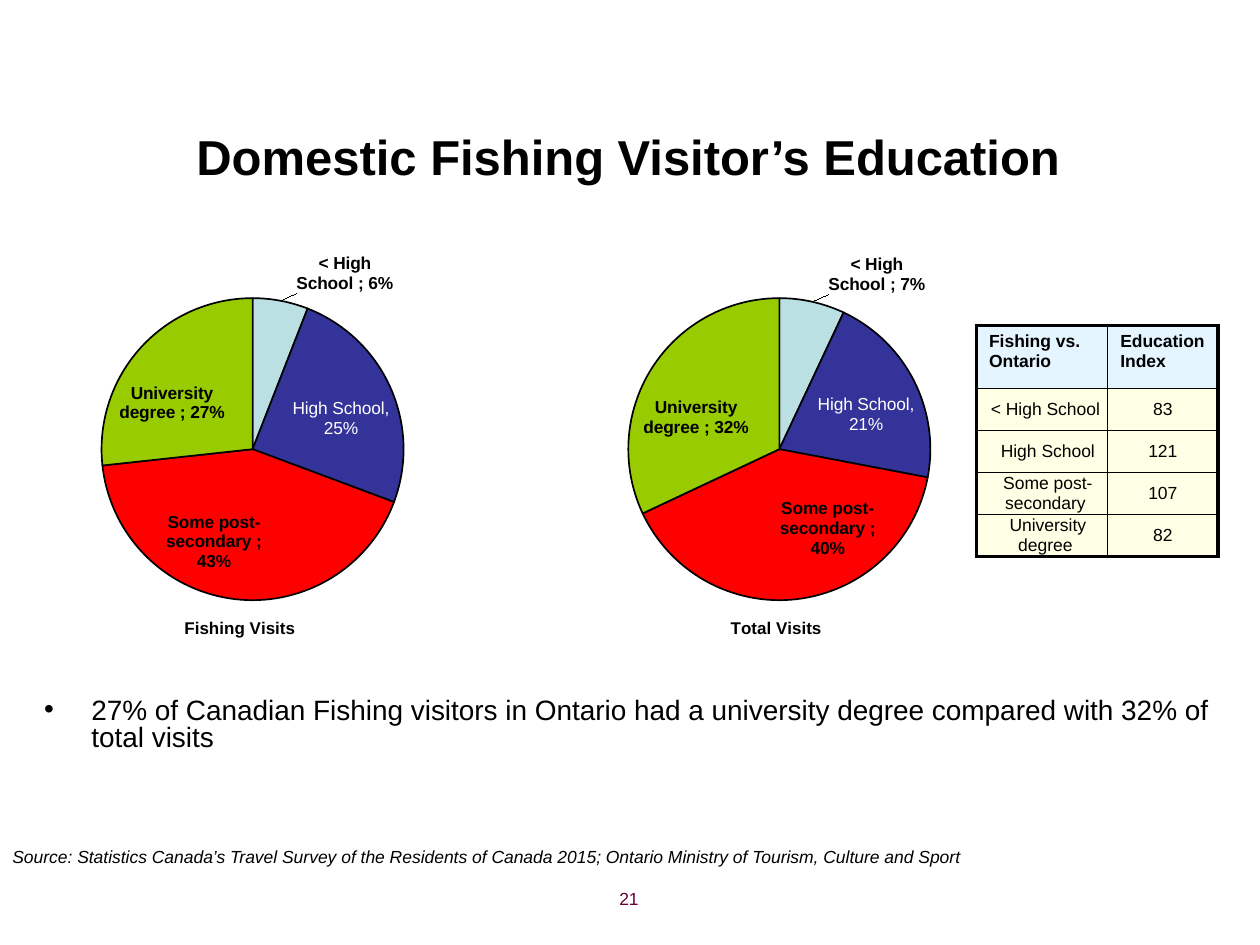
from lxml import etree
from pptx import Presentation
from pptx.chart.data import CategoryChartData
from pptx.dml.color import RGBColor
from pptx.enum.chart import XL_CHART_TYPE, XL_LABEL_POSITION
from pptx.enum.text import MSO_ANCHOR, PP_ALIGN
from pptx.oxml import parse_xml
from pptx.oxml.ns import nsdecls, qn
from pptx.util import Pt

PIE = XL_CHART_TYPE.PIE
CENTER, OUTSIDE = XL_LABEL_POSITION.CENTER, XL_LABEL_POSITION.OUTSIDE_END
MIDDLE, TOP = MSO_ANCHOR.MIDDLE, MSO_ANCHOR.TOP
ALIGN_L, ALIGN_C, ALIGN_R = PP_ALIGN.LEFT, PP_ALIGN.CENTER, PP_ALIGN.RIGHT

# Content
TITLE = "Domestic Fishing Visitor’s Education"
BULLET = ("27% of Canadian Fishing visitors in Ontario had a university degree "
          "compared with 32% of total visits")
SOURCE = ("Source: Statistics Canada’s Travel Survey of the Residents of Canada 2015; "
          "Ontario Ministry of Tourism, Culture and Sport")
PAGE = "21"
LEVELS = ["< High School ", "High School", "Some post-secondary ", "University degree "]
# Label shifts are fractions of the chart size, one pair per slice
PIES = [
    {"title": "Fishing Visits ", "left": 23, "title_x": 0.29,
     "values": [0.06, 0.25, 0.43, 0.27],
     "shifts": [(0.03, 0), (0.04, 0), (-0.06, 0.04), (-0.05, 0.01)]},
    {"title": "Total Visits ", "left": 324, "title_x": 0.33,
     "values": [0.07, 0.21, 0.40, 0.32],
     "shifts": [(0.03, 0), (0.04, 0), (0.08, 0.01), (-0.04, 0.02)]},
]
INDEX_HEAD = ("Fishing vs. Ontario", "Education Index")
INDEX = ["83", "121", "107", "82"]

THEME = {
    "font": "Arial", "text": "000000", "page": "660033", "label": "FFFFFF",
    "slices": ["BBE0E3", "333399", "FF0000", "99CC00"],
    "head": "CCECFF", "cell": "FFFFCC",
    "title_size": 28, "body_size": 16, "small": 10, "chart_size": 9.9, "chart_title": 9.7,
}


def rgb(name):
    return RGBColor.from_string(THEME.get(name, name))


def style(font, size, color="text", **formats):
    values = {"name": THEME["font"], "size": Pt(THEME[size]), "bold": False, **formats}
    for name, value in values.items():
        setattr(font, name, value)
    font.color.rgb = rgb(color)


def write(tf, text, size, align=ALIGN_L, color="text", **formats):
    tf.word_wrap = True
    p = tf.paragraphs[0]
    p.alignment = align
    p.space_before = Pt(0)
    r = p.add_run()
    r.text = text
    style(r.font, size, color, **formats)
    return p


def place(sp, left, top, width, height):
    sp.left, sp.top, sp.width, sp.height = map(Pt, (left, top, width, height))


def manual_layout(x, y, w=None, h=None):
    modes = ""
    if w is not None:
        modes = '<c:layoutTarget val="inner"/>'
    if w is not None or y > 0.5:
        modes += '<c:xMode val="edge"/><c:yMode val="edge"/>'
    sizes = "".join(f'<c:{tag} val="{v}"/>' for tag, v in
                    (("x", x), ("y", y), ("w", w), ("h", h)) if v is not None)
    return parse_xml(f'<c:layout {nsdecls("c")}><c:manualLayout>{modes}{sizes}'
                     "</c:manualLayout></c:layout>")


def set_layout(parent, after, layout):
    for old in parent.findall(qn("c:layout")):
        parent.remove(old)
    if after is None:
        parent.insert(0, layout)
    else:
        parent.find(qn(after)).addnext(layout)


def show_category(labels):
    """Show category and value, parted by a semicolon."""
    labels.find(qn("c:showCatName")).set("val", "1")
    labels.find(qn("c:showVal")).set("val", "1")
    labels.find(qn("c:showPercent")).set("val", "0")
    separator = etree.Element(qn("c:separator"))
    separator.text = "; "
    last = labels.find(qn("c:showBubbleSize"))
    if last is None:
        last = labels.find(qn("c:showPercent"))
    last.addnext(separator)


def add_pie(s, pie):
    data = CategoryChartData(number_format="0%")
    data.categories = LEVELS
    data.add_series("Series 1", pie["values"])
    chart = s.shapes.add_chart(PIE, Pt(pie["left"]), Pt(132), Pt(278), Pt(254), data).chart
    style(chart.font, "chart_size", bold=True)
    chart.has_legend = False
    chart.has_title = True
    write(chart.chart_title.text_frame, pie["title"], "chart_title", ALIGN_C, bold=True)
    title = chart._chartSpace.chart.find(qn("c:title"))
    set_layout(title, "c:tx", manual_layout(pie["title_x"], 0.86))
    set_layout(chart._chartSpace.chart.plotArea, None,
               manual_layout(0.126, 0.151, 0.621, 0.68))

    plot = chart.plots[0]
    plot.vary_by_categories = True
    series = plot.series[0]
    for i, (color, shift) in enumerate(zip(THEME["slices"], pie["shifts"])):
        point = series.points[i]
        point.format.fill.solid()
        point.format.fill.fore_color.rgb = rgb(color)
        point.format.line.color.rgb = rgb("text")
        point.format.line.width = Pt(0.97)
        label = point.data_label
        if i == 1:
            text = f"{LEVELS[i]}, {pie['values'][i]:.0%}"
            write(label.text_frame, text, "chart_size", ALIGN_C, "label")
        else:
            style(label.font, "chart_size", bold=True)
        label.position = CENTER if i else OUTSIDE
        element = series._element.find(qn("c:dLbls")).findall(qn("c:dLbl"))[i]
        set_layout(element, "c:idx", manual_layout(*shift))
        show_category(element)


def format_cell(cell, fill, borders):
    cell.fill.solid()
    cell.fill.fore_color.rgb = rgb(fill)
    tcPr = cell._tc.get_or_add_tcPr()
    color = tcPr.find(".//" + qn("a:srgbClr"))
    etree.SubElement(color, qn("a:alpha")).set("val", "50000")
    for i, (side, width) in enumerate(borders):
        tcPr.insert(i, parse_xml(
            f'<a:ln{side} {nsdecls("a")} w="{Pt(width)}"><a:solidFill>'
            f'<a:srgbClr val="{THEME["text"]}"/></a:solidFill></a:ln{side}>'))


def add_index_table(s):
    rows = [INDEX_HEAD, *zip(LEVELS, INDEX)]
    heights = [36] + [24] * len(INDEX)
    widths = [75, 63]
    table = s.shapes.add_table(len(rows), 2, Pt(558), Pt(186),
                               Pt(sum(widths)), Pt(sum(heights))).table
    table.horz_banding = False
    for column, width in zip(table.columns, widths):
        column.width = Pt(width)
    for i, (row, height) in enumerate(zip(rows, heights)):
        table.rows[i].height = Pt(height)
        for j, text in enumerate(row):
            cell = table.cell(i, j)
            head = i == 0
            margins = (7.2, 3.6, 7.2, 3.6) if head else (0 if j else 6.5, 0, 0, 0)
            for side, value in zip(("left", "top", "right", "bottom"), margins):
                setattr(cell, f"margin_{side}", Pt(value))
            cell.vertical_anchor = TOP if head else MIDDLE
            write(cell.text_frame, text, "small", ALIGN_L if head else ALIGN_C, bold=head)
            outer = {"L": j == 0, "R": j == 1, "T": head, "B": i == len(rows) - 1}
            format_cell(cell, "head" if head else "cell",
                        [(side, 2.25 if edge else 1) for side, edge in outer.items()])


prs = Presentation()
prs.slide_width, prs.slide_height = Pt(720), Pt(540)
s = prs.slides.add_slide(prs.slide_layouts[1])

# Title and bullet
title, body = s.placeholders
place(title, 12, 62, 694, 54)
title.text_frame.vertical_anchor = MIDDLE
write(title.text_frame, TITLE, "title_size", ALIGN_C, bold=True)
place(body, 18, 396, 684, 90)
p = write(body.text_frame, BULLET, "body_size")
p.line_spacing = 0.8
pPr = p._p.get_or_add_pPr()
pPr.set("marL", str(Pt(27)))
pPr.set("indent", str(-Pt(27)))
etree.SubElement(pPr, qn("a:buChar")).set("char", "•")

# Charts and table
for pie in PIES:
    add_pie(s, pie)
add_index_table(s)

# Source and page number
for text, box, align, formats in [
    (SOURCE, (0, 480, 706, 19), ALIGN_L, {"italic": True}),
    (PAGE, (204, 504, 168, 25), ALIGN_R, {"color": "page"}),
]:
    sp = s.shapes.add_textbox(*map(Pt, box))
    write(sp.text_frame, text, "small", align, **formats)

prs.save("out.pptx")
